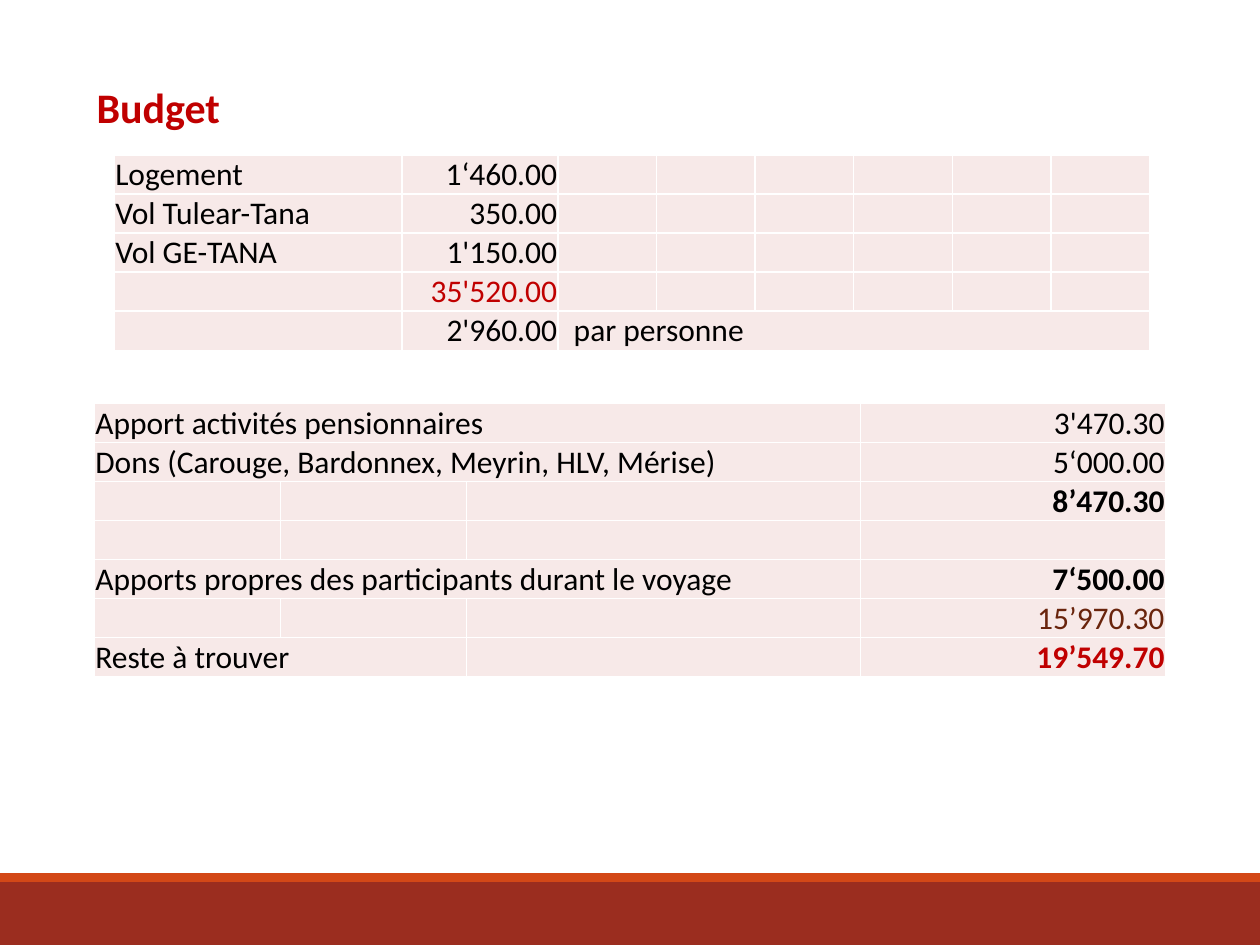
from lxml import etree
from pptx import Presentation
from pptx.dml.color import RGBColor
from pptx.enum import shapes, text
from pptx.oxml import ns
from pptx.util import Pt

COLORS = {
    "black": "000000", "red": "C00000", "brown": "69240C", "white": "FFFFFF",
    "cell": "F7E9E8", "band": "9B2D1F", "stripe": "D34817",
}
FONT = "Calibri"
ROW_H = 22.32
LEFT, RIGHT = text.PP_ALIGN.LEFT, text.PP_ALIGN.RIGHT


def rgb(name):
    return RGBColor.from_string(COLORS[name])


def write(tf, words, size=18, color="black", bold=False, align=LEFT):
    p = tf.paragraphs[0]
    p.alignment = align
    if not words:
        # A small end mark keeps an empty cell from stretching its row
        etree.SubElement(p._p, ns.qn("a:endParaRPr"), sz="1000")
        return
    r = p.add_run()
    r.text = words
    r.font.name, r.font.size, r.font.bold = FONT, Pt(size), bold
    r.font.color.rgb = rgb(color)


def format_cell(cell):
    cell.margin_left = cell.margin_right = Pt(0.5)
    cell.margin_top = Pt(0.3)
    cell.margin_bottom = 0
    cell.vertical_anchor = text.MSO_ANCHOR.BOTTOM
    tc_pr = cell._tc.get_or_add_tcPr()
    for side in ("lnL", "lnR", "lnT", "lnB"):
        ln = etree.SubElement(tc_pr, ns.qn("a:" + side), w=str(Pt(1)))
        fill = etree.SubElement(ln, ns.qn("a:solidFill"))
        etree.SubElement(fill, ns.qn("a:srgbClr"), val=COLORS["white"])
    cell.fill.solid()
    cell.fill.fore_color.rgb = rgb("cell")


def add_budget_table(s, x, y, widths, entries, merges):
    """entries maps (row, column) to the words and their format."""
    rows = 1 + max(row for row, _ in entries)
    table = s.shapes.add_table(rows, len(widths), Pt(x), Pt(y),
                               Pt(sum(widths)), Pt(rows * ROW_H)).table
    table.first_row = table.horz_banding = False
    for column, width in zip(table.columns, widths):
        column.width = Pt(width)
    for i, row in enumerate(table.rows):
        row.height = Pt(ROW_H)
        for j, cell in enumerate(row.cells):
            format_cell(cell)
            words, fmt = entries.get((i, j), ("", {}))
            write(cell.text_frame, words, **fmt)
    for row, first, last in merges:
        table.cell(row, first).merge(table.cell(row, last))
    return table


def add_title(s, x, y, w, h):
    sp = s.shapes.title
    sp.left, sp.top, sp.width, sp.height = Pt(x), Pt(y), Pt(w), Pt(h)
    tf = sp.text_frame
    tf.word_wrap = True
    tf.vertical_anchor = text.MSO_ANCHOR.TOP
    write(tf, "Budget", size=24, color="red", bold=True)


def add_costs(s, x, y):
    right = {"align": RIGHT}
    entries = {
        (0, 0): ("Logement", {}), (0, 1): ("1‘460.00", right),
        (1, 0): ("Vol Tulear-Tana", {}), (1, 1): ("350.00", right),
        (2, 0): ("Vol GE-TANA", {}), (2, 1): ("1'150.00", right),
        (3, 1): ("35'520.00", {"align": RIGHT, "color": "red"}),
        (4, 1): ("2'960.00", right), (4, 2): ("par personne", {}),
    }
    table = add_budget_table(s, x, y, [164.2, 89.3] + [56.35] * 6,
                             entries, [(4, 2, 7)])
    table.cell(4, 2).margin_left = Pt(9)


def add_funding(s, x, y):
    right = {"align": RIGHT}
    bold = {"align": RIGHT, "bold": True}
    entries = {
        (0, 0): ("Apport activités pensionnaires", {}),
        (0, 3): ("3'470.30", right),
        (1, 0): ("Dons (Carouge, Bardonnex, Meyrin, HLV, Mérise)", {}),
        (1, 3): ("5‘000.00", right),
        (2, 3): ("8’470.30", bold),
        (4, 0): ("Apports propres des participants durant le voyage", {}),
        (4, 3): ("7‘500.00", bold),
        (5, 3): ("15’970.30", {"align": RIGHT, "color": "brown"}),
        (6, 0): ("Reste à trouver", {}),
        (6, 3): ("19’549.70", {**bold, "color": "red"}),
    }
    add_budget_table(s, x, y, [106.3, 106.3, 225.2, 174.2], entries,
                     [(0, 0, 2), (1, 0, 2), (4, 0, 2), (6, 0, 1)])


def add_footer(s, x, y, w, h):
    stripe_h = 5
    bars = (("band", y + stripe_h, h - stripe_h), ("stripe", y, stripe_h))
    for color, top, height in bars:
        sp = s.shapes.add_shape(shapes.MSO_SHAPE.RECTANGLE,
                                Pt(x), Pt(top), Pt(w), Pt(height))
        sp.shadow.inherit = False
        sp.fill.solid()
        sp.fill.fore_color.rgb = rgb(color)
        sp.line.fill.background()


def main():
    prs = Presentation()
    prs.slide_width, prs.slide_height = Pt(720), Pt(540)
    s = prs.slides.add_slide(prs.slide_layouts[5])
    add_footer(s, 0, 499, 720, 41)
    add_title(s, 48, 43.2, 657, 36)
    add_costs(s, 65.4, 88.6)
    add_funding(s, 54, 230.5)
    prs.save("out.pptx")


if __name__ == "__main__":
    main()
